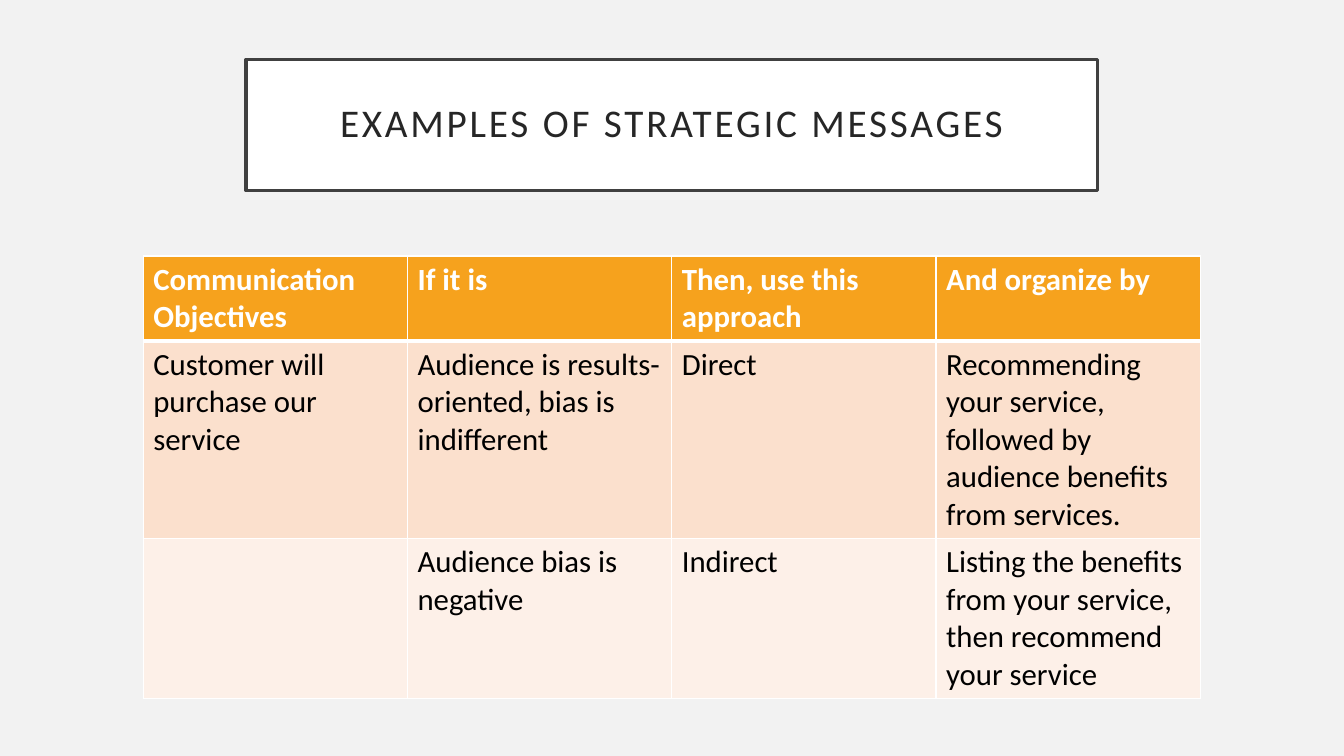
from dataclasses import dataclass

from lxml import etree
from pptx import Presentation
from pptx.dml.color import RGBColor
from pptx.enum.shapes import MSO_SHAPE
from pptx.enum.text import MSO_ANCHOR, PP_ALIGN
from pptx.oxml.ns import qn
from pptx.util import Cm, Pt

RECTANGLE = MSO_SHAPE.RECTANGLE
MIDDLE = MSO_ANCHOR.MIDDLE
CENTER = PP_ALIGN.CENTER
LEFT = PP_ALIGN.LEFT
BLANK_LAYOUT = 6


@dataclass(frozen=True)
class Theme:
    font: str = "Calibri"
    background: str = "F2F2F2"
    white: str = "FFFFFF"
    frame: str = "404040"
    title_text: str = "262626"
    body_text: str = "000000"
    header_fill: str = "F6A21D"
    band_fills: tuple = ("FBE0CD", "FDF0E8")
    title_size: int = 28
    table_size: int = 22
    frame_width: float = 2.5
    border_width: int = 1
    header_border_width: int = 3


THEME = Theme()

MESSAGE_ROWS = [
    ["Communication Objectives", "If it is", "Then, use this approach", "And organize by"],
    [
        "Customer will purchase our service",
        "Audience is results-oriented, bias is indifferent",
        "Direct",
        "Recommending your service, followed by audience benefits from services.",
    ],
    [
        "",
        "Audience bias is negative",
        "Indirect",
        "Listing the benefits from your service, then recommend your service",
    ],
]
ROW_HEIGHTS = [2.14, 4.98, 4.03]
COLUMN_WIDTH = 6.66


def rgb(color):
    return RGBColor.from_string(color)


def write_text(text_frame, text, size, color, bold=False, align=LEFT,
               line_spacing=1.0, letter_spacing=0):
    text_frame.word_wrap = True
    paragraph = text_frame.paragraphs[0]
    paragraph.alignment = align
    paragraph.line_spacing = line_spacing
    if not text:
        paragraph.font.size = Pt(size)
        return
    run = paragraph.add_run()
    run.text = text
    run.font.name = THEME.font
    run.font.size = Pt(size)
    run.font.bold = bold
    run.font.color.rgb = rgb(color)
    if letter_spacing:
        run.font._element.set("spc", str(letter_spacing * 100))


def add_title(slide, text):
    shape = slide.shapes.add_shape(RECTANGLE, Cm(6.2), Cm(1.5), Cm(21.46), Cm(3.3))
    shape.shadow.inherit = False
    shape.fill.solid()
    shape.fill.fore_color.rgb = rgb(THEME.white)
    shape.line.color.rgb = rgb(THEME.frame)
    shape.line.width = Pt(THEME.frame_width)
    text_frame = shape.text_frame
    text_frame.vertical_anchor = MIDDLE
    text_frame.margin_left = text_frame.margin_right = Cm(0.5)
    text_frame.margin_top = text_frame.margin_bottom = Cm(0.5)
    write_text(text_frame, text, THEME.title_size, THEME.title_text,
               align=CENTER, line_spacing=0.9, letter_spacing=2)


def set_border(cell, side, width):
    properties = cell._tc.get_or_add_tcPr()
    line = etree.SubElement(properties, qn(f"a:ln{side}"), w=str(Pt(width)))
    fill = etree.SubElement(line, qn("a:solidFill"))
    etree.SubElement(fill, qn("a:srgbClr"), val=THEME.white)


def format_cell(cell, text, row_index):
    is_header = row_index == 0
    thick_side = {0: "B", 1: "T"}.get(row_index)
    for side in "LRTB":
        is_thick = side == thick_side
        set_border(cell, side, THEME.header_border_width if is_thick else THEME.border_width)
    cell.fill.solid()
    band_fill = THEME.band_fills[(row_index - 1) % len(THEME.band_fills)]
    cell.fill.fore_color.rgb = rgb(THEME.header_fill if is_header else band_fill)
    write_text(cell.text_frame, text, THEME.table_size,
               THEME.white if is_header else THEME.body_text, bold=is_header)


def add_message_table(slide, rows):
    column_count = len(rows[0])
    table = slide.shapes.add_table(
        len(rows), column_count, Cm(3.61), Cm(6.45),
        Cm(COLUMN_WIDTH * column_count), Cm(sum(ROW_HEIGHTS)),
    ).table
    for column in table.columns:
        column.width = Cm(COLUMN_WIDTH)
    for row_index, texts in enumerate(rows):
        table.rows[row_index].height = Cm(ROW_HEIGHTS[row_index])
        for column_index, text in enumerate(texts):
            format_cell(table.cell(row_index, column_index), text, row_index)


def main():
    presentation = Presentation()
    presentation.slide_width = Cm(33.87)
    presentation.slide_height = Cm(19.05)
    slide = presentation.slides.add_slide(presentation.slide_layouts[BLANK_LAYOUT])
    slide.background.fill.solid()
    slide.background.fill.fore_color.rgb = rgb(THEME.background)
    add_title(slide, "EXAMPLES OF STRATEGIC MESSAGES")
    add_message_table(slide, MESSAGE_ROWS)
    presentation.save("out.pptx")


if __name__ == "__main__":
    main()
